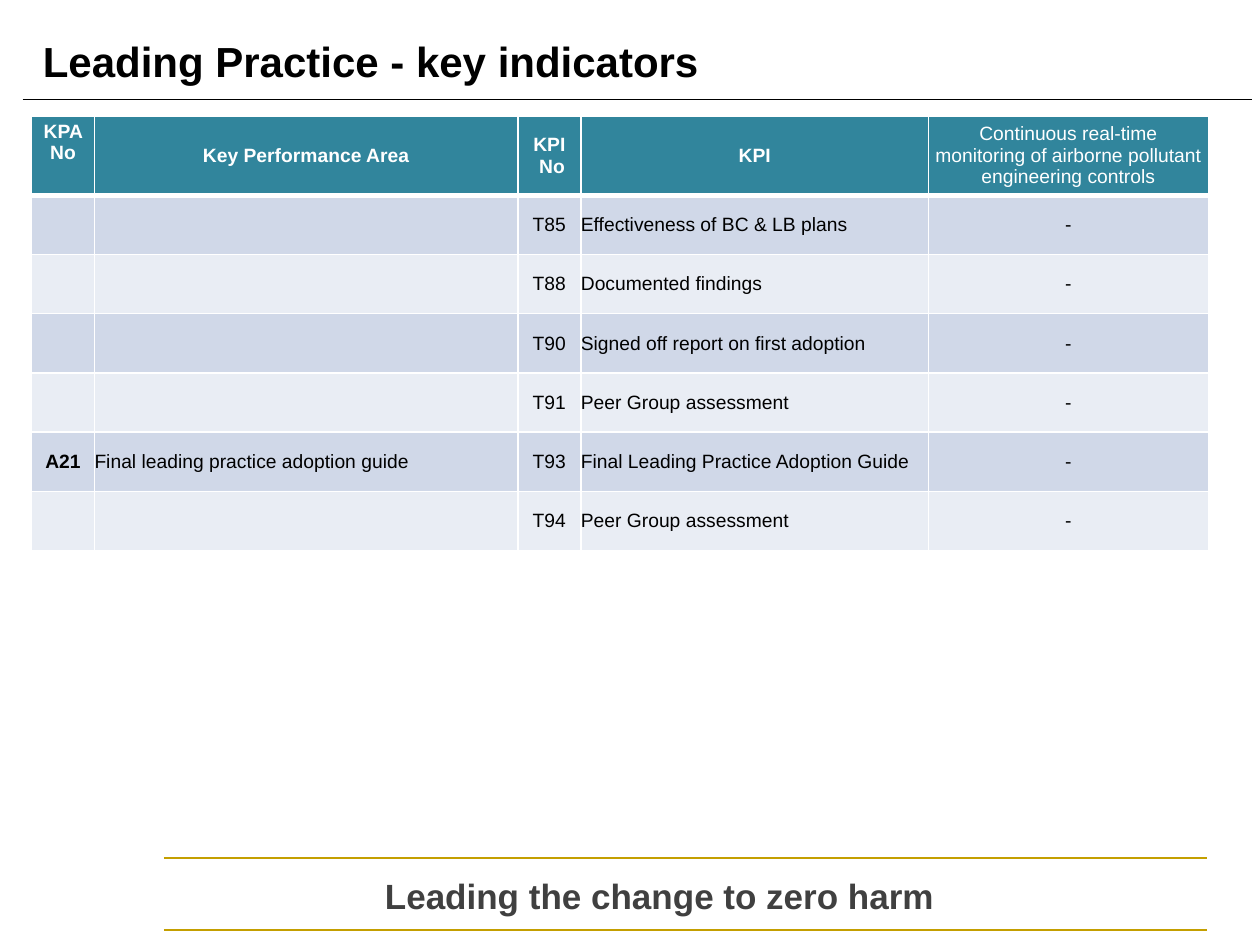
from lxml import etree
from pptx import Presentation
from pptx.dml.color import RGBColor
from pptx.enum.shapes import MSO_CONNECTOR
from pptx.enum.text import MSO_ANCHOR, MSO_AUTO_SIZE, PP_ALIGN
from pptx.oxml.ns import qn
from pptx.util import Inches, Pt

LEFT, CENTER = PP_ALIGN.LEFT, PP_ALIGN.CENTER
TOP, MIDDLE = MSO_ANCHOR.TOP, MSO_ANCHOR.MIDDLE
STRAIGHT = MSO_CONNECTOR.STRAIGHT

COLORS = {
    "black": "000000",
    "white": "FFFFFF",
    "gold": "C49F00",
    "slogan": "404040",
    "header": "31859C",
    "odd": "D0D8E8",
    "even": "E9EDF4",
}
FONT = "Arial"

COLUMN_WIDTHS = [0.5, 3.36, 0.5, 2.76, 2.22]
HEADER_HEIGHT, ROW_HEIGHT = 0.51, 0.47
HEADINGS = [
    "KPA No",
    "Key Performance Area",
    "KPI\n No",
    "KPI",
    "Continuous real-time monitoring of airborne pollutant engineering controls",
]
INDICATORS = [
    ("", "", "T85", "Effectiveness of BC & LB plans", "-"),
    ("", "", "T88", "Documented findings", "-"),
    ("", "", "T90", "Signed off report on first adoption", "-"),
    ("", "", "T91", "Peer Group assessment", "-"),
    ("A21", "Final leading practice adoption guide", "T93",
     "Final Leading Practice Adoption Guide", "-"),
    ("", "", "T94", "Peer Group assessment", "-"),
]


def rgb(name):
    return RGBColor.from_string(COLORS[name])


def write_text(frame, text, size=11, color="black", bold=False, align=LEFT):
    frame.word_wrap = True
    for number, line in enumerate(text.split("\n")):
        paragraph = frame.paragraphs[0] if number == 0 else frame.add_paragraph()
        paragraph.alignment = align
        paragraph.space_before = Pt(0)
        paragraph.font.size = Pt(size)
        if line:
            run = paragraph.add_run()
            run.text = line
            run.font.name = FONT
            run.font.size = Pt(size)
            run.font.bold = bold
            run.font.color.rgb = rgb(color)


def add_rule(shapes, left, right, y, color, weight):
    rule = shapes.add_connector(
        STRAIGHT, Inches(left), Inches(y), Inches(right), Inches(y))
    rule.line.color.rgb = rgb(color)
    rule.line.width = Pt(weight)
    etree.SubElement(rule._element.spPr, qn("a:effectLst"))


def set_borders(cell, bottom):
    properties = cell._tc.get_or_add_tcPr()
    weights = {"a:lnL": 1, "a:lnR": 1, "a:lnT": 1, "a:lnB": bottom}
    # Borders come before the fill in the cell properties
    for position, (tag, weight) in enumerate(weights.items()):
        border = etree.Element(qn(tag), w=str(Pt(weight)))
        fill = etree.SubElement(border, qn("a:solidFill"))
        etree.SubElement(fill, qn("a:srgbClr"), val=COLORS["white"])
        properties.insert(position, border)


def fill_cell(cell, text, fill, inset, anchor=MIDDLE, bottom=1, **text_format):
    cell.fill.solid()
    cell.fill.fore_color.rgb = rgb(fill)
    cell.margin_left = cell.margin_right = Inches(inset)
    cell.margin_top = cell.margin_bottom = Inches(inset)
    cell.vertical_anchor = anchor
    write_text(cell.text_frame, text, **text_format)
    set_borders(cell, bottom)


def add_heading(slide, left, top, width, height):
    add_rule(slide.shapes, 0.18, 9.94, 0.79, "black", 0.75)
    title = slide.shapes.title
    title.left, title.top = Inches(left), Inches(top)
    title.width, title.height = Inches(width), Inches(height)
    title.text_frame.auto_size = MSO_AUTO_SIZE.NONE
    title.text_frame.vertical_anchor = MIDDLE
    write_text(title.text_frame, "Leading Practice - key indicators",
               size=24, bold=True)


def add_footer(slide, left, top, width, height):
    footer = slide.shapes.add_group_shape()
    for y in (top + height, top):
        add_rule(footer.shapes, left, left + width, y, "gold", 1)
    slogan = footer.shapes.add_textbox(
        Inches(left + 0.34), Inches(top + 0.08), Inches(7.19), Inches(0.39))
    write_text(slogan.text_frame, "Leading the change to zero harm",
               size=20, color="slogan", bold=True, align=CENTER)


def add_indicator_table(slide, left, top):
    height = HEADER_HEIGHT + ROW_HEIGHT * len(INDICATORS)
    table = slide.shapes.add_table(
        len(INDICATORS) + 1, len(HEADINGS), Inches(left), Inches(top),
        Inches(sum(COLUMN_WIDTHS)), Inches(height)).table
    for column, width in zip(table.columns, COLUMN_WIDTHS):
        column.width = Inches(width)
    for number, row in enumerate(table.rows):
        row.height = Inches(ROW_HEIGHT if number else HEADER_HEIGHT)

    # Header row
    last = len(HEADINGS) - 1
    for column, heading in enumerate(HEADINGS):
        fill_cell(table.cell(0, column), heading, "header", 0.04,
                  anchor=MIDDLE if column else TOP, bottom=3,
                  color="white", bold=column != last, align=CENTER)

    # Banded indicator rows
    for number, indicator in enumerate(INDICATORS, start=1):
        band = "odd" if number % 2 else "even"
        for column, text in enumerate(indicator):
            fill_cell(table.cell(number, column), text, band,
                      0.04 if column == last else 0, bold=column == 0,
                      align=LEFT if column in (1, 3) else CENTER)


def main():
    presentation = Presentation()
    presentation.slide_width = Inches(10)
    presentation.slide_height = Inches(7.5)
    slide = presentation.slides.add_slide(presentation.slide_layouts[5])
    add_heading(slide, 0.24, 0.17, 9.84, 0.63)
    add_footer(slide, 1.3, 6.81, 8.28, 0.57)
    add_indicator_table(slide, 0.25, 0.92)
    presentation.save("out.pptx")


if __name__ == "__main__":
    main()
